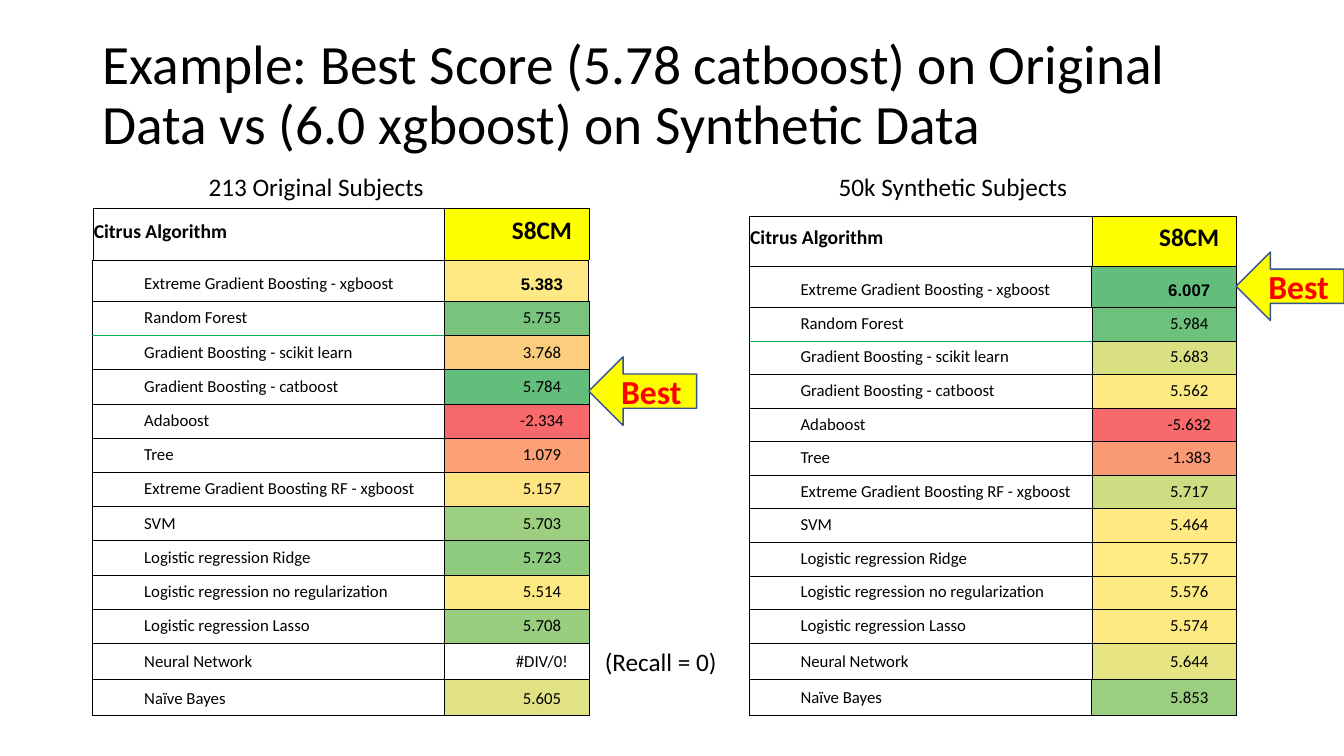
import pptx
import pptx.util
import pptx.dml.color
import pptx.enum.shapes
import pptx.enum.text
import pptx.oxml

Inches = pptx.util.Inches
Pt = pptx.util.Pt
RGBColor = pptx.dml.color.RGBColor
ALIGN = pptx.enum.text.PP_ALIGN
ANCHOR = pptx.enum.text.MSO_ANCHOR

BLACK = RGBColor(0, 0, 0)
RED = RGBColor(0xFF, 0, 0)
YELLOW = RGBColor(0xFF, 0xFF, 0)
GREEN = RGBColor(0, 0xB0, 0x50)
NAVY = RGBColor(0x32, 0x54, 0x91)

NS = "http://schemas.openxmlformats.org/drawingml/2006/main"
THIN, THICK = 0.38, 0.75
VALUE_WIDTH = 1.43
FIRST_ROW, LAST_ROWS = 0.41, 0.36

ALGORITHMS = [
    "Extreme Gradient Boosting - xgboost",
    "Random Forest",
    "Gradient Boosting - scikit learn",
    "Gradient Boosting - catboost",
    "Adaboost",
    "Tree",
    "Extreme Gradient Boosting RF - xgboost",
    "SVM",
    "Logistic regression Ridge",
    "Logistic regression no regularization",
    "Logistic regression Lasso",
    "Neural Network",
    "Naïve Bayes",
]
ORIGINAL_SCORES = [
    ("5.383", RGBColor(0xFE, 0xE8, 0x83)),
    ("5.755", RGBColor(0x78, 0xC4, 0x7D)),
    ("3.768", RGBColor(0xFD, 0xCD, 0x7E)),
    ("5.784", RGBColor(0x63, 0xBE, 0x7B)),
    ("-2.334", RGBColor(0xF8, 0x69, 0x6B)),
    ("1.079", RGBColor(0xFB, 0xA1, 0x75)),
    ("5.157", RGBColor(0xFE, 0xE4, 0x82)),
    ("5.703", RGBColor(0x9C, 0xCF, 0x7F)),
    ("5.723", RGBColor(0x8E, 0xCB, 0x7E)),
    ("5.514", RGBColor(0xFE, 0xEA, 0x83)),
    ("5.708", RGBColor(0x99, 0xCE, 0x7F)),
    ("#DIV/0!", None),
    ("5.605", RGBColor(0xE0, 0xE2, 0x83)),
]
SYNTHETIC_SCORES = [
    ("6.007", RGBColor(0x63, 0xBE, 0x7B)),
    ("5.984", RGBColor(0x6C, 0xC1, 0x7C)),
    ("5.683", RGBColor(0xD9, 0xE0, 0x82)),
    ("5.562", RGBColor(0xFE, 0xEA, 0x83)),
    ("-5.632", RGBColor(0xF8, 0x69, 0x6B)),
    ("-1.383", RGBColor(0xFA, 0x9A, 0x74)),
    ("5.717", RGBColor(0xCD, 0xDD, 0x82)),
    ("5.464", RGBColor(0xFE, 0xE9, 0x83)),
    ("5.577", RGBColor(0xFF, 0xEB, 0x84)),
    ("5.576", RGBColor(0xFE, 0xEA, 0x83)),
    ("5.574", RGBColor(0xFE, 0xEA, 0x83)),
    ("5.644", RGBColor(0xE7, 0xE4, 0x83)),
    ("5.853", RGBColor(0x9B, 0xCF, 0x7F)),
]


def set_text(tf, text, size, color=BLACK, bold=False, font="Calibri", align=ALIGN.LEFT):
    p = tf.paragraphs[0]
    p.text = text
    p.alignment = align
    p.font.size = Pt(size)
    p.font.name = font
    p.font.bold = bold
    p.font.color.rgb = color
    return p


def add_text(slide, box, text, size, wrap=True, anchor=ANCHOR.TOP):
    sp = slide.shapes.add_textbox(*map(Inches, box))
    tf = sp.text_frame
    tf.word_wrap = wrap
    tf.vertical_anchor = anchor
    return set_text(tf, text, size)


def set_borders(cell, borders):
    tcPr = cell._tc.get_or_add_tcPr()
    for i, side in enumerate("LRTB"):
        width, color = borders[side]
        tcPr.insert(i, pptx.oxml.parse_xml(
            f'<a:ln{side} xmlns:a="{NS}" w="{Pt(width)}"><a:solidFill>'
            f'<a:srgbClr val="{color}"/></a:solidFill></a:ln{side}>'))


def cell_borders(row, col, last):
    borders = dict.fromkeys("LRTB", (THIN, BLACK))
    if row == 0:
        borders["B"] = (THICK, BLACK)
    elif row == 1 or (row == last and col == 0):
        borders = dict.fromkeys("LRTB", (THICK, BLACK))
    elif col == 0:
        borders["L"] = (THICK, BLACK)
        if row == 2:
            borders["T"] = (THICK, BLACK)
            borders["B"] = (THIN, GREEN)
        elif row == 3:
            borders["T"] = (THIN, GREEN)
        elif row == last - 1:
            borders["B"] = (THICK, BLACK)
    elif row == 2:
        borders["T"] = (THICK, BLACK)
    return borders


def fill_cell(cell, row, col, text, fill, last):
    cell.margin_left = cell.margin_top = cell.margin_right = Inches(0.01)
    cell.margin_bottom = Inches(0.07)
    header = row == 0
    cell.vertical_anchor = ANCHOR.MIDDLE if header else ANCHOR.BOTTOM
    best_row = row == 1 and col == 1
    size = (14, 18)[col] if header else 12
    p = set_text(cell.text_frame, text, size, bold=header or best_row,
                 font="Arial" if best_row else "Calibri",
                 align=ALIGN.CENTER if col else ALIGN.LEFT)
    if col or not header:
        pPr = p._p.get_or_add_pPr()
        pPr.set("marL", str(Inches(0.5)))
        pPr.set("indent", "0")
    if fill is None:
        cell.fill.background()
    else:
        cell.fill.solid()
        cell.fill.fore_color.rgb = fill
    set_borders(cell, cell_borders(row, col, last))


def add_score_table(slide, box, header_height, scores):
    left, top, width, height = box
    rows = [("Citrus Algorithm", "S8CM", YELLOW)]
    rows += [(name, score, fill) for name, (score, fill) in zip(ALGORITHMS, scores)]
    last = len(rows) - 1
    middle = len(rows) - 4
    pitch = (height - header_height - FIRST_ROW - 2 * LAST_ROWS) / middle
    heights = [header_height, FIRST_ROW] + [pitch] * middle + [LAST_ROWS] * 2
    table = slide.shapes.add_table(len(rows), 2, *map(Inches, box)).table
    table.first_row = False
    table.horz_banding = False
    table.columns[0].width = Inches(width - VALUE_WIDTH)
    table.columns[1].width = Inches(VALUE_WIDTH)
    for row, (name, score, fill) in enumerate(rows):
        table.rows[row].height = Inches(heights[row])
        fill_cell(table.cell(row, 0), row, 0, name, None, last)
        fill_cell(table.cell(row, 1), row, 1, score, fill, last)


def add_best_arrow(slide, left, top):
    sp = slide.shapes.add_shape(pptx.enum.shapes.MSO_SHAPE.LEFT_ARROW,
                                Inches(left), Inches(top), Inches(1.07), Inches(0.68))
    sp.shadow.inherit = False
    sp.fill.solid()
    sp.fill.fore_color.rgb = YELLOW
    sp.line.color.rgb = NAVY
    sp.line.width = Pt(1)
    sp.text_frame.vertical_anchor = ANCHOR.MIDDLE
    set_text(sp.text_frame, "Best", 24, RED, True, align=ALIGN.CENTER)


def add_panel(slide, box, caption, caption_left, header_height, scores, best_top):
    left, top, width, height = box
    add_score_table(slide, box, header_height, scores)
    add_text(slide, (caption_left, 1.65, 3.05, 0.42), caption, 18)
    add_best_arrow(slide, left + width, best_top)


def main():
    prs = pptx.Presentation()
    prs.slide_width = Inches(13.33)
    prs.slide_height = Inches(7.5)
    slide = prs.slides.add_slide(prs.slide_layouts[6])
    title = add_text(slide, (0.92, 0.4, 11.5, 1.11),
                     "Example: Best Score (5.78 catboost) on Original Data "
                     "vs (6.0 xgboost) on Synthetic Data", 39.6, anchor=ANCHOR.MIDDLE)
    title.line_spacing = 0.9
    add_panel(slide, (0.92, 2.07, 4.92, 5.03), "213 Original Subjects", 1.97,
              0.51, ORIGINAL_SCORES, 3.54)
    add_panel(slide, (7.43, 2.14, 4.83, 4.96), "50k Synthetic Subjects", 8.22,
              0.5, SYNTHETIC_SCORES, 2.5)
    add_text(slide, (5.9, 6.36, 1.33, 0.4), "(Recall = 0)", 18, wrap=False)
    prs.save("out.pptx")


if __name__ == "__main__":
    main()
